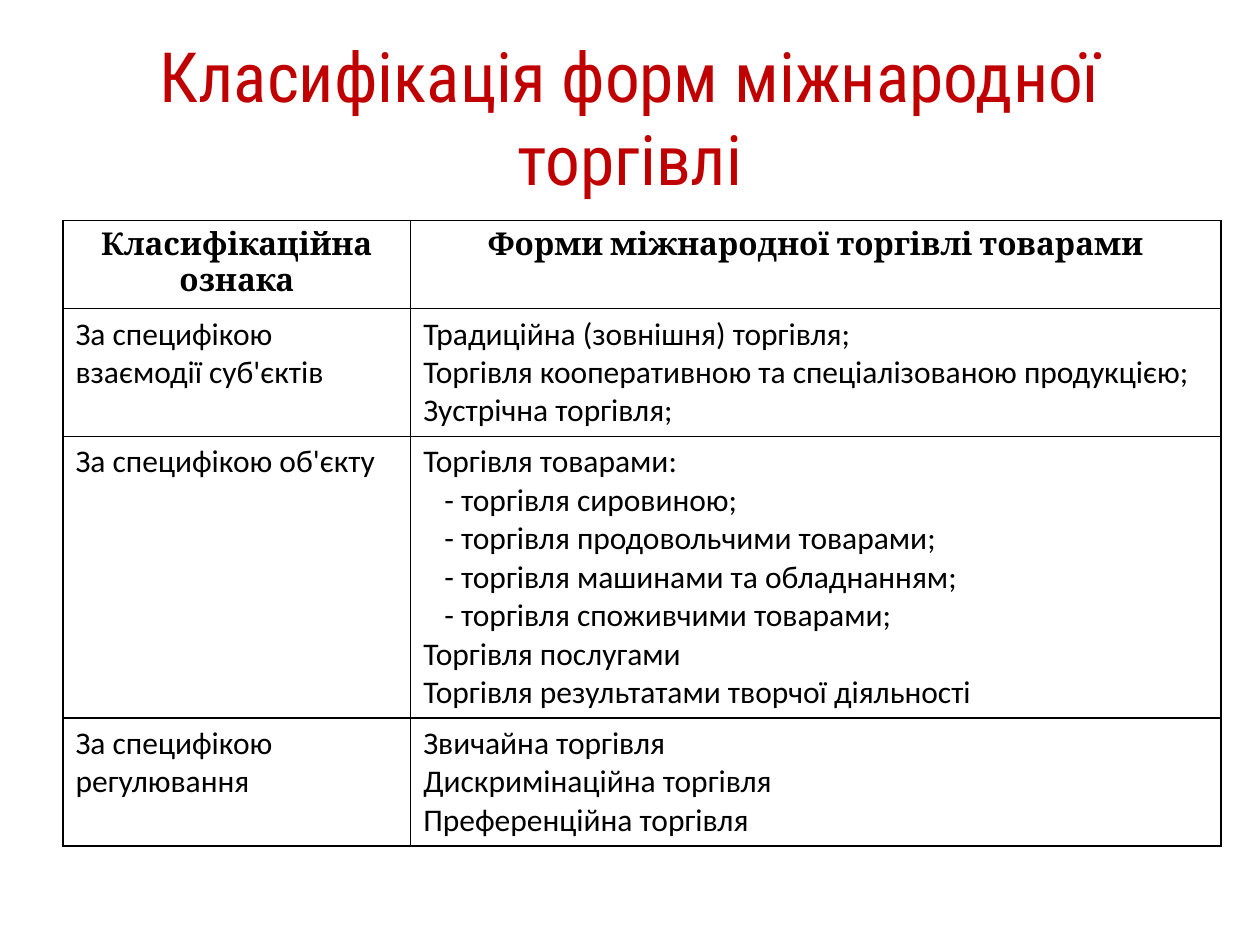
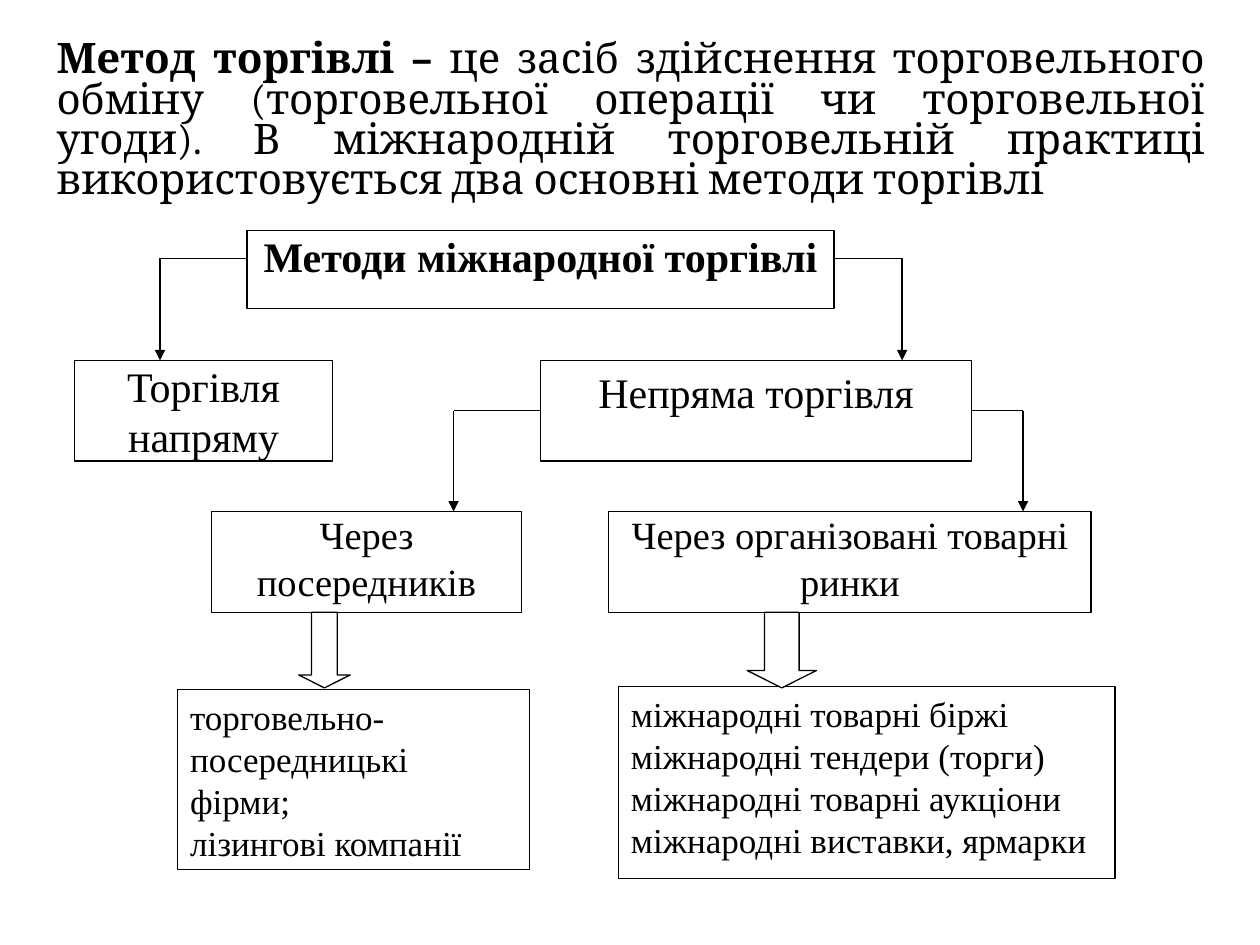
"""Builds two slides on the forms and methods of international trade."""
from dataclasses import dataclass

from lxml import etree
from pptx import Presentation
from pptx import util as u
from pptx.dml.color import RGBColor
from pptx.enum import shapes, text
from pptx.oxml.ns import qn

TITLE = "Класифікація форм міжнародної торгівлі"
HEADINGS = ("Класифікаційна ознака", "Форми міжнародної торгівлі товарами")
FORMS = (
    ("За специфікою взаємодії суб'єктів",
     ("Традиційна (зовнішня) торгівля;",
      "Торгівля кооперативною та спеціалізованою продукцією;",
      "Зустрічна торгівля;")),
    ("За специфікою об'єкту",
     ("Торгівля товарами:",
      "- торгівля сировиною;",
      "- торгівля продовольчими товарами;",
      "- торгівля машинами та обладнанням;",
      "- торгівля споживчими товарами;",
      "Торгівля послугами",
      "Торгівля результатами творчої діяльності")),
    ("За специфікою регулювання",
     ("Звичайна торгівля", "Дискримінаційна торгівля", "Преференційна торгівля")),
)
TERM = "Метод торгівлі – "
DEFINITION = ("це засіб здійснення торговельного обміну (торговельної операції чи "
              "торговельної угоди). В міжнародній торговельній практиці "
              "використовується два основні методи торгівлі")

COLUMNS, ROWS = 100, 75
TITLE_AREA = (5, 3, 90, 12.5)
DEFINITION_AREA = (3.5, 2.8, 93.1, 66.1)
TABLE_CORNER = (5, 17.5)
TABLE_COLUMNS = (27.6, 64.3)
HEADER_ROW, LINE_ROW, ROW_PADDING = 6.8, 3.05, 1

BOXES = {
    "methods": ((19.6, 18.3, 46.6, 6.2), "heading", ("Методи міжнародної торгівлі",)),
    "direct": ((5.9, 28.6, 20.5, 8), "box", ("Торгівля напряму",)),
    "indirect": ((42.9, 28.6, 34.2, 8), "padded", ("Непряма торгівля",)),
    "agents": ((16.8, 40.6, 24.6, 8), "channel", ("Через посередників",)),
    "markets": ((48.3, 40.6, 38.3, 8), "channel", ("Через організовані товарні ринки",)),
    "firms": ((14.1, 54.7, 27.9, 14.3), "list",
              ("торговельно-посередницькі фірми;", "лізингові компанії")),
    "venues": ((49.1, 54.5, 39.4, 15.2), "list",
               ("міжнародні товарні біржі", "міжнародні тендери (торги)",
                "міжнародні товарні аукціони", "міжнародні виставки, ярмарки")),
}
BRANCHES = (("methods", 20.5, "direct", 12.7), ("methods", 20.5, "indirect", 71.6),
            ("indirect", 32.6, "agents", 36), ("indirect", 32.6, "markets", 81.2))
BLOCK_ARROWS = (("agents", 23.7, 4.1), ("markets", 59.3, 5.5))
BLOCK_ARROW_HEIGHT = 6


@dataclass(frozen=True)
class Style:
    """Describes one kind of text."""
    font: str
    size: float
    bold: bool = False
    align: object = text.PP_ALIGN.CENTER
    padded: bool = True
    color: str = "000000"


class Theme:
    """Holds the colours, line widths and type styles."""
    ink, paper = "000000", "FFFFFF"
    border, line = 1, 0.75
    sub_indent = 12
    styles = {
        "title": Style("Roboto Condensed", 39.6, color="C00000"),
        "header": Style("Cambria", 18, True),
        "cell": Style("Calibri", 18, align=text.PP_ALIGN.LEFT),
        "definition": Style("Cambria", 24, align=text.PP_ALIGN.JUSTIFY),
        "heading": Style("Times New Roman", 24, True, padded=False),
        "box": Style("Times New Roman", 24, padded=False),
        "padded": Style("Times New Roman", 24),
        "channel": Style("Times New Roman", 22, padded=False),
        "list": Style("Times New Roman", 20, align=text.PP_ALIGN.LEFT),
    }


deck = Presentation()
deck.slide_width, deck.slide_height = u.Inches(10), u.Inches(7.5)


def across(columns):
    """Converts grid columns to a length."""
    return round(columns * deck.slide_width / COLUMNS)


def down(rows):
    """Converts grid rows to a length."""
    return round(rows * deck.slide_height / ROWS)


def place(left, top, width, height):
    """Converts a grid area to lengths."""
    return across(left), down(top), across(width), down(height)


def add_page():
    """Adds a blank page."""
    return deck.slides.add_slide(deck.slide_layouts[6])


def write(frame, lines, style_name):
    """Fills a text frame and formats every run."""
    style = Theme.styles[style_name]
    frame.word_wrap = True
    frame.text = "\n".join(lines)
    for para in frame.paragraphs:
        para.alignment = style.align
        for span in para.runs:
            span.font.name = style.font
            span.font.size = u.Pt(style.size)
            span.font.bold = style.bold
            span.font.color.rgb = RGBColor.from_string(style.color)


def add_text(page, area, lines, style_name):
    """Adds a text box and returns its frame."""
    frame = page.shapes.add_textbox(*place(*area)).text_frame
    write(frame, lines, style_name)
    return frame


def add_outlined(page, kind, area):
    """Adds a white shape with a thin outline."""
    shape = page.shapes.add_shape(kind, *place(*area))
    shape.shadow.inherit = False
    shape.fill.solid()
    shape.fill.fore_color.rgb = RGBColor.from_string(Theme.paper)
    shape.line.color.rgb = RGBColor.from_string(Theme.ink)
    shape.line.width = u.Pt(Theme.line)
    return shape


def add_box(page, area, style_name, lines):
    """Adds a labelled rectangle."""
    frame = add_outlined(page, shapes.MSO_SHAPE.RECTANGLE, area).text_frame
    write(frame, lines, style_name)
    frame.vertical_anchor = text.MSO_ANCHOR.TOP
    if not Theme.styles[style_name].padded:
        frame.margin_left = frame.margin_right = 0
        frame.margin_top = frame.margin_bottom = 0


def add_line(page, start, end, arrow=False):
    """Adds a straight connector, with an arrowhead if asked."""
    line = page.shapes.add_connector(
        shapes.MSO_CONNECTOR.STRAIGHT, across(start[0]), down(start[1]),
        across(end[0]), down(end[1]))
    line.line.color.rgb = RGBColor.from_string(Theme.ink)
    line.line.width = u.Pt(Theme.line)
    if arrow:
        etree.SubElement(line.line._get_or_add_ln(), qn("a:tailEnd"), type="triangle")
    etree.SubElement(line._element.spPr, qn("a:effectLst"))


def add_branch(page, parent, level, child, turn):
    """Joins the side of a parent box to the top of a child box."""
    left, _, width, _ = BOXES[parent][0]
    side = left if turn < left else left + width
    add_line(page, (side, level), (turn, level))
    add_line(page, (turn, level), (turn, BOXES[child][0][1]), arrow=True)


def frame_cell(cell):
    """Gives a cell a plain fill and four borders."""
    properties = cell._tc.get_or_add_tcPr()
    for edge in ("a:lnL", "a:lnR", "a:lnT", "a:lnB"):
        border = etree.SubElement(properties, qn(edge), w=str(u.Pt(Theme.border)))
        fill = etree.SubElement(border, qn("a:solidFill"))
        etree.SubElement(fill, qn("a:srgbClr"), val=Theme.ink)
    cell.fill.solid()
    cell.fill.fore_color.rgb = RGBColor.from_string(Theme.paper)


def add_forms_table(page):
    """Adds the table of trade forms."""
    records = [tuple((heading,) for heading in HEADINGS)]
    records += [((feature,), forms) for feature, forms in FORMS]
    heights = [HEADER_ROW] + [len(forms) * LINE_ROW + ROW_PADDING for _, forms in FORMS]
    area = (*TABLE_CORNER, sum(TABLE_COLUMNS), sum(heights))
    table = page.shapes.add_table(len(records), len(HEADINGS), *place(*area)).table
    for column, width in zip(table.columns, TABLE_COLUMNS):
        column.width = across(width)
    for index, (record, height) in enumerate(zip(records, heights)):
        table.rows[index].height = down(height)
        for cell, lines in zip(table.rows[index].cells, record):
            frame_cell(cell)
            write(cell.text_frame, lines, "cell" if index else "header")
            for para in cell.text_frame.paragraphs:
                if para.text.startswith("-"):
                    para._p.get_or_add_pPr().set("marL", str(u.Pt(Theme.sub_indent)))


def build_forms():
    """Builds the page with the classification table."""
    page = add_page()
    frame = add_text(page, TITLE_AREA, [TITLE], "title")
    frame.vertical_anchor = text.MSO_ANCHOR.MIDDLE
    add_forms_table(page)


def build_methods():
    """Builds the page with the scheme of trade methods."""
    page = add_page()
    para = add_text(page, DEFINITION_AREA, [TERM], "definition").paragraphs[0]
    term = para.runs[0]
    rest = para.add_run()
    rest.text = DEFINITION
    rest.font.name, rest.font.size = term.font.name, term.font.size
    rest.font.color.rgb = term.font.color.rgb
    term.font.bold = True
    para.line_spacing = 0.8
    para.space_before = u.Pt(4.8)
    for area, style_name, lines in BOXES.values():
        add_box(page, area, style_name, lines)
    for branch in BRANCHES:
        add_branch(page, *branch)
    for source, left, width in BLOCK_ARROWS:
        _, top, _, height = BOXES[source][0]
        arrow = add_outlined(page, shapes.MSO_SHAPE.DOWN_ARROW,
                             (left, top + height, width, BLOCK_ARROW_HEIGHT))
        arrow.adjustments[1] = 0.25


def main():
    """Builds and saves the deck."""
    build_forms()
    build_methods()
    deck.save("out.pptx")


if __name__ == "__main__":
    main()
